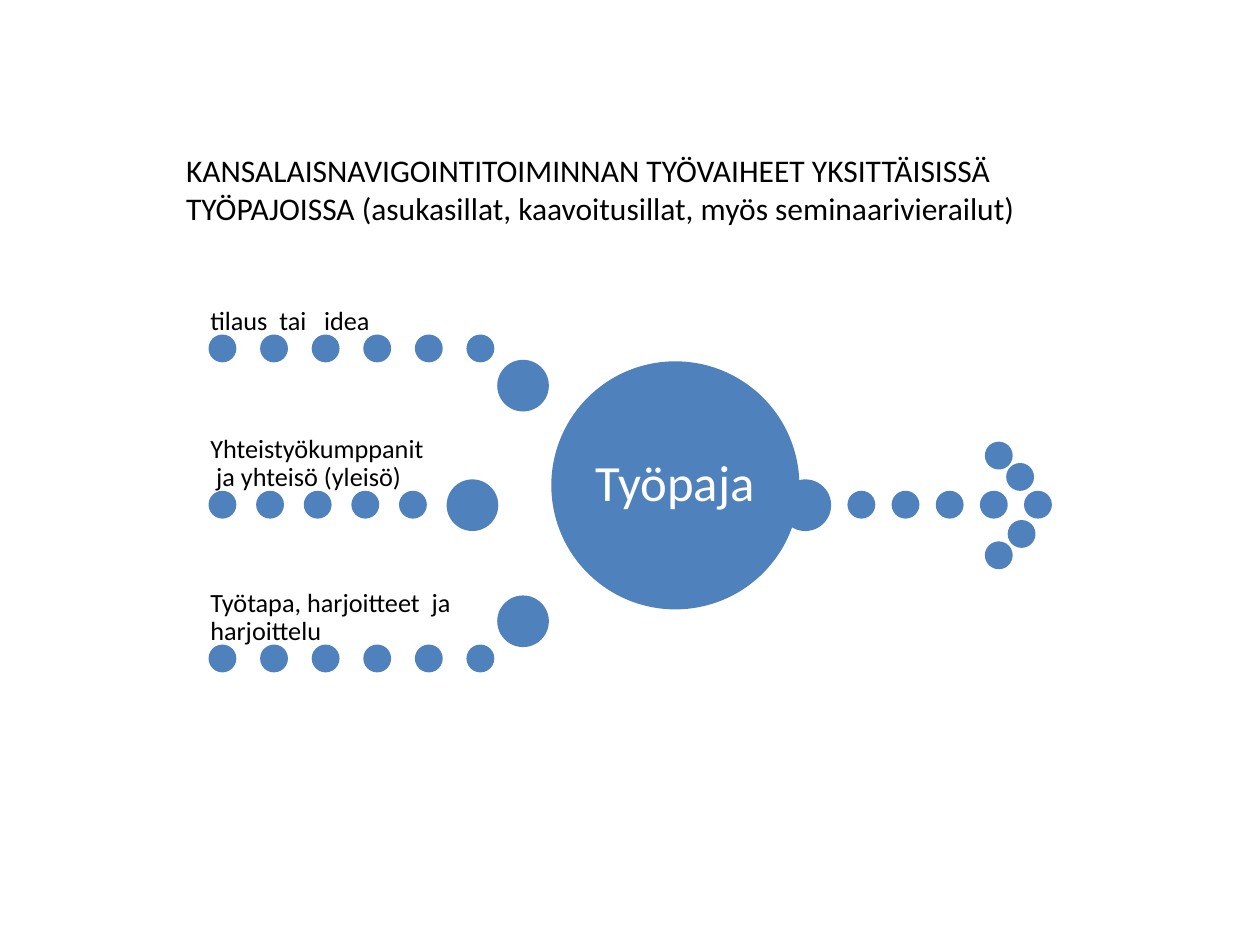
from pptx import Presentation
from pptx import util as u
from pptx.dml.color import RGBColor
from pptx.enum import shapes, text

BLUE, BLACK, WHITE = "4F81BD", "000000", "FFFFFF"
SMALL, MEDIUM, LARGE = 0.49, 0.97, 4.93
LEFT = 4.24
LABEL_HEIGHT = 1.24
MIDDLE_ROW = 9.93


def color(value):
    return RGBColor.from_string(value)


def set_frame(frame, anchor, inset):
    frame.word_wrap = True
    frame.auto_size = text.MSO_AUTO_SIZE.NONE
    frame.vertical_anchor = anchor
    frame.margin_left = frame.margin_right = u.Cm(inset)
    frame.margin_top = frame.margin_bottom = u.Cm(inset)


def write_lines(paragraph, lines, size, value, alignment=text.PP_ALIGN.LEFT, spacing=0.9):
    paragraph.alignment = alignment
    paragraph.line_spacing = spacing
    for index, line in enumerate(lines):
        if index:
            paragraph.add_line_break()
        run = paragraph.add_run()
        run.text = line
        run.font.name = "Calibri"
        run.font.size = u.Pt(size)
        run.font.color.rgb = color(value)


def add_title(slide, wording):
    title = slide.shapes.title
    title.left, title.top = u.Cm(3.5), u.Cm(2.92)
    title.width, title.height = u.Cm(20.2), u.Cm(1.8)
    frame = title.text_frame
    set_frame(frame, text.MSO_ANCHOR.TOP, 0.13)
    frame.margin_left = frame.margin_right = u.Cm(0.25)
    write_lines(frame.paragraphs[0], [wording], 18, BLACK, spacing=1.0)


def add_circle(slide, left, top, diameter):
    shape = slide.shapes.add_shape(
        shapes.MSO_SHAPE.OVAL, u.Cm(left), u.Cm(top), u.Cm(diameter), u.Cm(diameter))
    shape.shadow.inherit = False
    shape.fill.solid()
    shape.fill.fore_color.rgb = color(BLUE)
    shape.line.color.rgb = color(BLUE)
    shape.line.width = u.Pt(2)
    return shape


def add_dot_row(slide, left, top, count, pitch):
    for index in range(count):
        add_circle(slide, left + index * pitch, top, SMALL)


def add_label(slide, lines, row_top, width):
    box = slide.shapes.add_textbox(
        u.Cm(LEFT), u.Cm(row_top - LABEL_HEIGHT), u.Cm(width), u.Cm(LABEL_HEIGHT))
    set_frame(box.text_frame, text.MSO_ANCHOR.BOTTOM, 0)
    write_lines(box.text_frame.paragraphs[0], lines, 15, BLACK)


def add_input(slide, lines, row_top, label_width, count, pitch, medium_left, medium_top):
    add_circle(slide, medium_left, medium_top, MEDIUM)
    add_dot_row(slide, LEFT, row_top, count, pitch)
    add_label(slide, lines, row_top, label_width)


def add_output_arrow(slide):
    add_dot_row(slide, 17.12, MIDDLE_ROW, 5, 0.89)
    add_circle(slide, 15.75, 9.7, MEDIUM)
    for left, top in [(19.89, 8.94), (20.32, 9.37), (20.35, 10.52), (19.89, 10.95)]:
        add_circle(slide, left, top, SMALL)


def add_workshop(slide):
    circle = add_circle(slide, 11.15, 7.32, LARGE)
    set_frame(circle.text_frame, text.MSO_ANCHOR.MIDDLE, 0.1)
    write_lines(circle.text_frame.paragraphs[0], ["Työpaja"], 29, WHITE, text.PP_ALIGN.CENTER)


def main():
    presentation = Presentation()
    presentation.slide_width, presentation.slide_height = u.Cm(25.4), u.Cm(19.05)
    slide = presentation.slides.add_slide(presentation.slide_layouts[5])
    add_title(slide, "KANSALAISNAVIGOINTITOIMINNAN TYÖVAIHEET YKSITTÄISISSÄ "
                     "TYÖPAJOISSA (asukasillat, kaavoitusillat, myös seminaarivierailut)")
    add_output_arrow(slide)
    add_workshop(slide)
    add_input(slide, ["tilaus  tai   idea"], 6.78, 5.69, 6, 1.04, 10.06, 7.29)
    add_input(slide, ["Yhteistyökumppanit", " ja yhteisö (yleisö)"],
              MIDDLE_ROW, 4.32, 5, 0.96, 9.04, 9.7)
    add_input(slide, ["Työtapa, harjoitteet  ja harjoittelu"], 13.03, 5.69, 6, 1.04, 10.06, 12.04)
    presentation.save("out.pptx")


if __name__ == "__main__":
    main()
